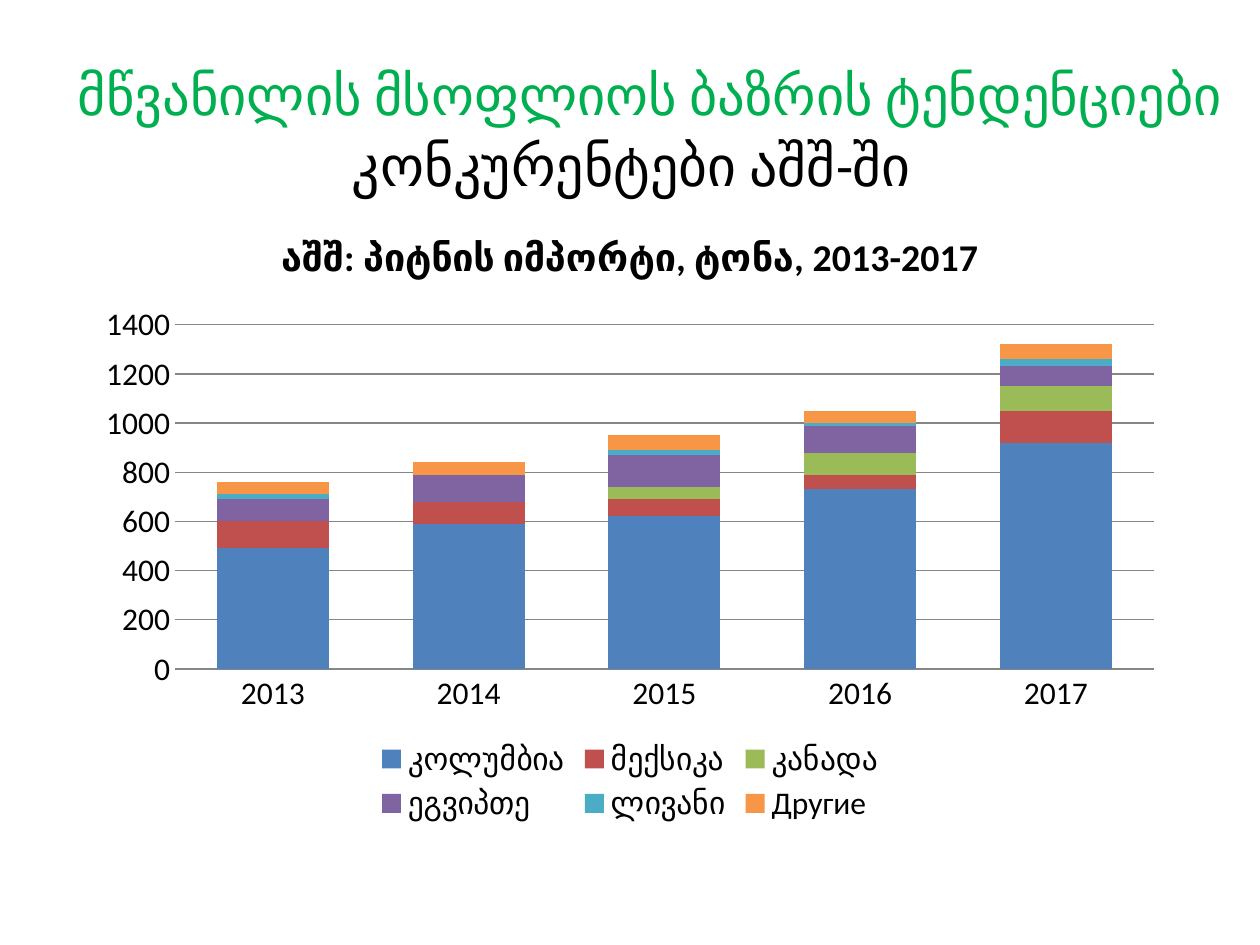
from pptx import Presentation
from pptx.chart.data import CategoryChartData
from pptx.dml.color import RGBColor
from pptx.enum.chart import XL_CHART_TYPE, XL_LEGEND_POSITION, XL_TICK_MARK
from pptx.enum.text import MSO_ANCHOR, PP_ALIGN
from pptx.util import Cm, Pt

STACKED = XL_CHART_TYPE.COLUMN_STACKED
BOTTOM = XL_LEGEND_POSITION.BOTTOM
NO_TICK = XL_TICK_MARK.NONE
TOP, MIDDLE = MSO_ANCHOR.TOP, MSO_ANCHOR.MIDDLE
CENTER = PP_ALIGN.CENTER

COLORS = {
    "heading": "00B050",
    "text": "000000",
    "grid": "868686",
    "კოლუმბია": "4F81BD",
    "მექსიკა": "C0504D",
    "კანადა": "9BBB59",
    "ეგვიპთე": "8064A2",
    "ლივანი": "4BACC6",
    "Другие": "F79646",
}
YEARS = ["2013", "2014", "2015", "2016", "2017"]
IMPORTS = {
    "კოლუმბია": [490, 590, 620, 730, 920],
    "მექსიკა": [110, 90, 70, 60, 130],
    "კანადა": [0, 0, 50, 90, 100],
    "ეგვიპთე": [90, 110, 130, 110, 80],
    "ლივანი": [20, 0, 20, 10, 30],
    "Другие": [50, 50, 60, 50, 60],
}


class SlideBuilder:
    font_name = "Calibri"

    def __init__(self, slide):
        self.slide = slide

    def color(self, name):
        return RGBColor.from_string(COLORS[name])

    def style(self, font, size, color="text", bold=False):
        font.name = self.font_name
        font.size = Pt(size)
        font.bold = bold
        font.color.rgb = self.color(color)

    def text(self, wording, box, size, color="text", anchor=TOP, before=0):
        frame = self.slide.shapes.add_textbox(*map(Cm, box)).text_frame
        frame.word_wrap = True
        frame.vertical_anchor = anchor
        line = frame.paragraphs[0]
        line.text = wording
        line.alignment = CENTER
        line.space_before = Pt(before)
        self.style(line.font, size, color)

    def stacked_chart(self, title, categories, series, box, size):
        data = CategoryChartData()
        data.categories = categories
        for name, values in series.items():
            data.add_series(name, values)
        chart = self.slide.shapes.add_chart(STACKED, *map(Cm, box), data).chart
        self.style(chart.font, size)

        chart.has_title = True
        heading = chart.chart_title.text_frame.paragraphs[0]
        heading.text = title
        self.style(heading.font, size * 1.2, bold=True)

        chart.has_legend = True
        chart.legend.position = BOTTOM
        chart.legend.include_in_layout = False

        plot = chart.plots[0]
        plot.gap_width = 75
        plot.overlap = 100
        plot.vary_by_categories = False
        for country in plot.series:
            country.format.fill.solid()
            country.format.fill.fore_color.rgb = self.color(country.name)

        years, tons = chart.category_axis, chart.value_axis
        for axis in (years, tons):
            axis.major_tick_mark = NO_TICK
            axis.minor_tick_mark = NO_TICK
        tons.has_major_gridlines = True
        tons.format.line.fill.background()
        for line in (years.format.line, tons.major_gridlines.format.line):
            line.color.rgb = self.color("grid")
            line.width = Pt(0.75)


def main():
    deck = Presentation()
    deck.slide_width, deck.slide_height = Cm(25.4), Cm(19.05)
    page = SlideBuilder(deck.slides.add_slide(deck.slide_layouts[6]))
    page.text("კონკურენტები აშშ-ში", (1.3, 2.51, 22.86, 1.8), 32, before=6.4)
    page.stacked_chart("აშშ: პიტნის იმპორტი, ტონა, 2013-2017", YEARS, IMPORTS,
                       (1.7, 4.11, 22, 12.6), 18)
    page.text("მწვანილის მსოფლიოს ბაზრის ტენდენციები",
              (1.3, 0.3, 23.62, 3.18), 31.2, "heading", MIDDLE)
    deck.save("out.pptx")


if __name__ == "__main__":
    main()
